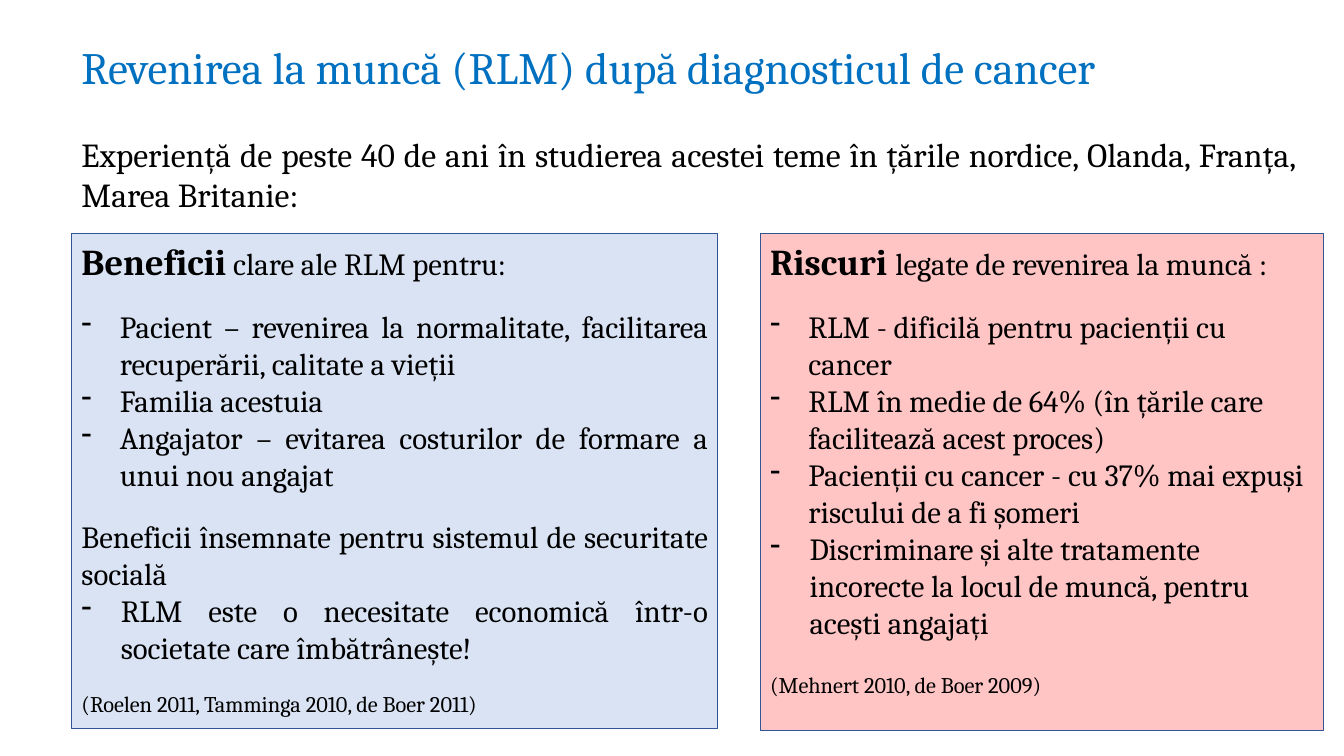
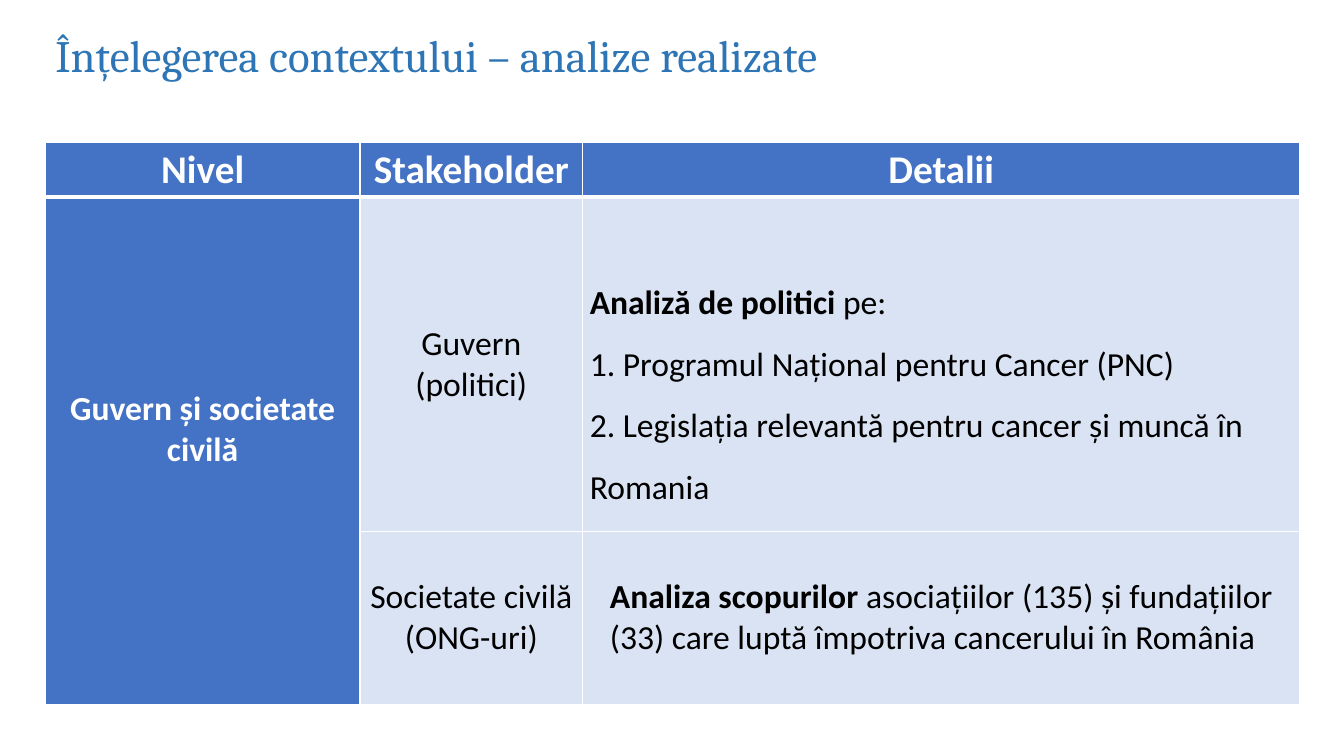
from dataclasses import dataclass
from typing import Any

from lxml import etree
from pptx import Presentation
from pptx import util as u
from pptx.dml.color import RGBColor
from pptx.enum import shapes, text
from pptx.oxml import ns

PX = 9144
SERIF, SANS = "Cambria", "Calibri"
BLACK, WHITE = "000000", "FFFFFF"
BLUE, STEEL, NAVY = "0070C0", "2E75B6", "2F5597"
HEAD, PALE, PINK = "4472C4", "DAE3F3", "FFC5C5"
LEFT, MID, FULL = text.PP_ALIGN.LEFT, text.PP_ALIGN.CENTER, text.PP_ALIGN.JUSTIFY
TOP, CORE = text.MSO_ANCHOR.TOP, text.MSO_ANCHOR.MIDDLE


@dataclass(frozen=True)
class Box:
    x: int
    y: int
    w: int
    h: int

    def emu(self) -> list[int]:
        return [v * PX for v in (self.x, self.y, self.w, self.h)]


@dataclass(frozen=True)
class Para:
    body: str
    lead: str = ""
    size: int = 22
    big: int = 26
    gap: int = 0
    hang: int = 0
    align: Any = FULL
    line: float = 1.0
    bold: bool = False
    tint: str = BLACK
    font: str = SERIF


@dataclass(frozen=True)
class Panel:
    box: Box
    fill: str
    paras: list[Para]


@dataclass(frozen=True)
class Cell:
    row: int
    col: int
    fill: str
    paras: list[Para]
    left: int = 7
    top: int = 4
    low: int = 4
    edge: int = 1


def rgb(code: str) -> RGBColor:
    return RGBColor.from_string(code)


def dash(para: Any, hang: int) -> None:
    props = para._p.get_or_add_pPr()
    props.set("marL", str(hang * PX))
    props.set("indent", str(-hang * PX))
    etree.SubElement(props, ns.qn("a:buChar")).set("char", "-")


def write(frame: Any, paras: list[Para]) -> None:
    frame.word_wrap = True
    for i, item in enumerate(paras):
        para = frame.add_paragraph() if i else frame.paragraphs[0]
        para.alignment = item.align
        para.line_spacing = item.line
        para.space_before = u.Pt(item.gap)
        parts = [(item.lead, item.big, True), (item.body, item.size, item.bold)]
        for words, size, bold in parts:
            if words:
                run = para.add_run()
                run.text = words
                run.font.name = item.font
                run.font.size = u.Pt(size)
                run.font.bold = bold
                run.font.color.rgb = rgb(item.tint)
        if item.hang:
            dash(para, item.hang)


def label(slide: Any, box: Box, para: Para, anchor: Any = TOP) -> None:
    frame = slide.shapes.add_textbox(*box.emu()).text_frame
    frame.vertical_anchor = anchor
    write(frame, [para])


def title(slide: Any, box: Box, words: str, tint: str, anchor: Any = TOP) -> None:
    label(slide, box, Para(words, size=32, align=LEFT, tint=tint), anchor)


def panel(slide: Any, item: Panel) -> None:
    shape = slide.shapes.add_shape(shapes.MSO_SHAPE.RECTANGLE, *item.box.emu())
    shape.shadow.inherit = False
    shape.fill.solid()
    shape.fill.fore_color.rgb = rgb(item.fill)
    shape.line.color.rgb = rgb(NAVY)
    shape.line.width = u.Pt(0.75)
    shape.text_frame.vertical_anchor = TOP
    write(shape.text_frame, item.paras)


def frame(cell: Any, low: int) -> None:
    props = cell._tc.get_or_add_tcPr()
    for i, side in enumerate(("lnL", "lnR", "lnT", "lnB")):
        line = etree.Element(ns.qn(f"a:{side}"))
        line.set("w", str(u.Pt(low if side == "lnB" else 1)))
        fill = etree.SubElement(line, ns.qn("a:solidFill"))
        etree.SubElement(fill, ns.qn("a:srgbClr")).set("val", WHITE)
        props.insert(i, line)


def grid(slide: Any, box: Box, cols: list[int], rows: list[int], cells: list[Cell]) -> None:
    table = slide.shapes.add_table(len(rows), len(cols), *box.emu()).table
    for col, wide in zip(table.columns, cols):
        col.width = wide * PX
    for row, tall in zip(table.rows, rows):
        row.height = tall * PX
    table.cell(1, 0).merge(table.cell(2, 0))
    for item in cells:
        cell = table.cell(item.row, item.col)
        cell.fill.solid()
        cell.fill.fore_color.rgb = rgb(item.fill)
        cell.margin_left, cell.margin_right = item.left * PX, 7 * PX
        cell.margin_top, cell.margin_bottom = item.top * PX, item.low * PX
        cell.vertical_anchor = CORE if item.row else TOP
        write(cell.text_frame, item.paras)
        frame(cell, item.edge)


def entry(body: str, lead: str = "", **more: Any) -> Para:
    look = dict(size=24, big=24, align=LEFT, font=SANS) | more
    return Para(body, lead, **look)


def work(slide: Any) -> None:
    title(slide, Box(71, 18, 1150, 97),
          "Revenirea la muncă (RLM) după diagnosticul de cancer", BLUE, CORE)
    label(slide, Box(71, 128, 1224, 91), Para(
        "Experiență de peste 40 de ani în studierea acestei teme în țările nordice, "
        "Olanda, Franța, Marea Britanie:", size=24))
    gains = [
        Para(" clare ale RLM pentru:", "Beneficii"),
        Para("Pacient – revenirea la normalitate, facilitarea recuperării, calitate a vieții",
             gap=18, hang=38),
        Para("Familia acestuia", hang=38),
        Para("Angajator – evitarea costurilor de formare a unui nou angajat", hang=38),
        Para("Beneficii însemnate pentru sistemul de securitate socială", gap=18),
        Para("RLM este o necesitate economică într-o societate care îmbătrânește!", hang=39),
        Para("(Roelen 2011, Tamminga 2010, de Boer 2011)", size=16, gap=18),
    ]
    risks = [
        Para("legate de revenirea la muncă :", "Riscuri "),
        Para("RLM - dificilă pentru pacienții cu cancer", gap=18, hang=38, align=LEFT),
        Para("RLM în medie de 64% (în țările care facilitează acest proces)",
             hang=38, align=LEFT),
        Para("Pacienții cu cancer - cu 37% mai expuși riscului de a fi șomeri",
             hang=38, align=LEFT),
        Para("Discriminare și alte tratamente incorecte la locul de muncă, "
             "pentru acești angajați", hang=39, align=LEFT),
        Para("(Mehnert 2010, de Boer 2009)", size=16, gap=22),
    ]
    panel(slide, Panel(Box(71, 232, 641, 491), PALE, gains))
    panel(slide, Panel(Box(754, 232, 559, 493), PINK, risks))


def levels(slide: Any) -> None:
    heads = [
        Cell(0, i, HEAD, [entry(name, size=28, align=MID, bold=True, tint=WHITE)], edge=3)
        for i, name in enumerate(("Nivel", "Stakeholder", "Detalii"))
    ]
    cells = [
        Cell(1, 0, HEAD, [entry("Guvern și societate civilă", align=MID,
                                bold=True, tint=WHITE)], low=45),
        Cell(1, 1, PALE, [entry(name, align=MID) for name in ("Guvern", "(politici)")]),
        Cell(1, 2, PALE, [
            entry("pe:", "Analiză de politici ", line=1.5),
            entry("1. Programul Național pentru Cancer (PNC)", line=1.5),
            entry("2. Legislația relevantă pentru cancer și muncă în Romania", line=1.5),
        ], top=45),
        Cell(2, 1, PALE, [entry("Societate civilă (ONG-uri)", align=MID)]),
        Cell(2, 2, PALE, [entry(
            "asociațiilor (135) și fundațiilor (33) care luptă împotriva cancerului în România",
            "Analiza scopurilor ")], left=27),
    ]
    grid(slide, Box(45, 141, 1244, 557), [312, 221, 711], [54, 332, 171], heads + cells)
    title(slide, Box(45, 23, 852, 64),
          "Înțelegerea contextului – analize realizate", STEEL)


def main() -> None:
    deck = Presentation()
    deck.slide_width, deck.slide_height = 1333 * PX, 750 * PX
    for draw in (work, levels):
        draw(deck.slides.add_slide(deck.slide_layouts[6]))
    deck.save("out.pptx")


if __name__ == "__main__":
    main()
